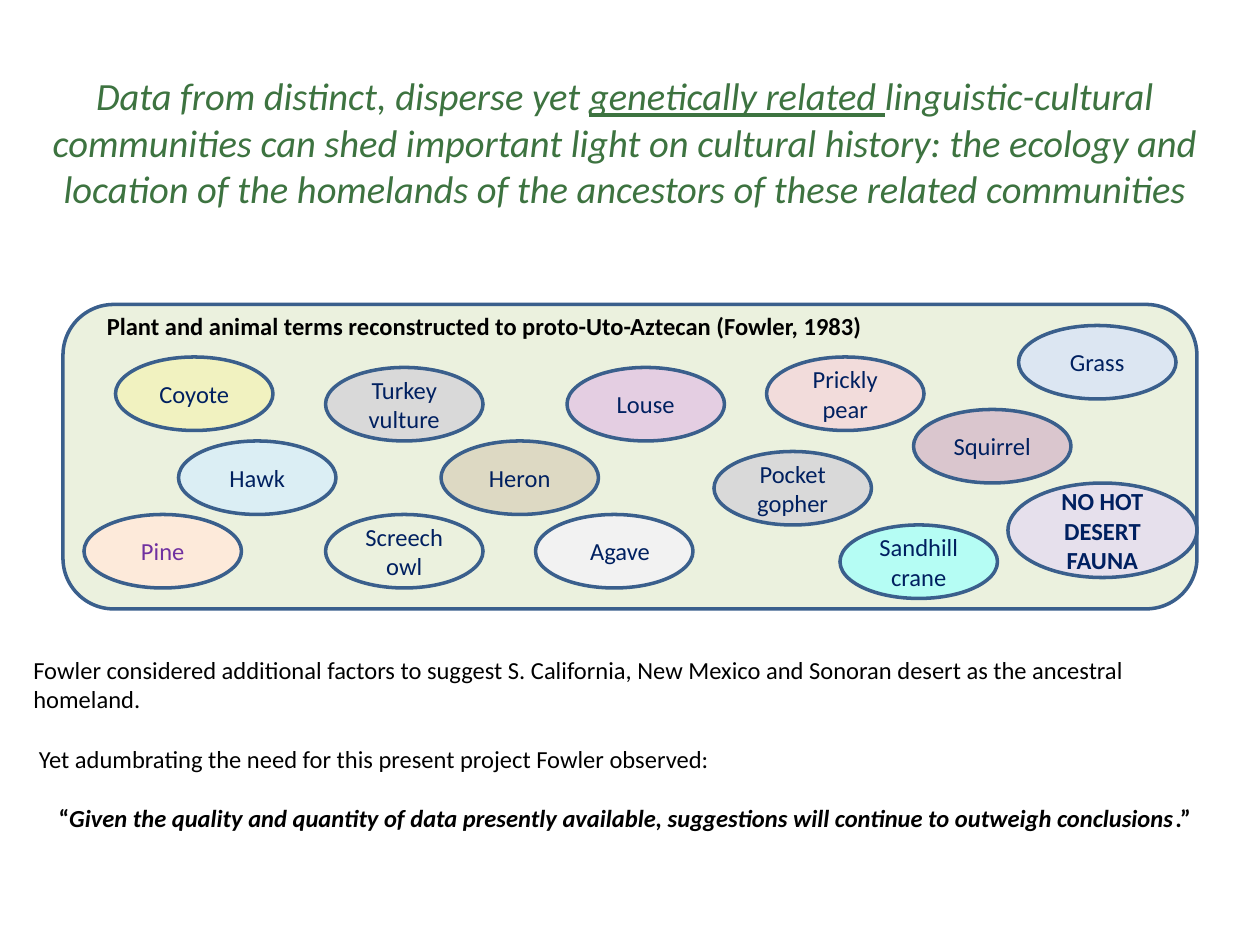
from typing import NamedTuple

from pptx import Presentation
from pptx import util as u
from pptx.dml.color import RGBColor
from pptx.enum import shapes, text

PX = 7620
NAVY = "002060"
BLACK = "000000"
GREEN = "3D7340"
OUTLINE = "3A5F8C"
PANEL = "EBF1DE"


class Term(NamedTuple):
    name: str
    left: int
    top: int
    fill: str
    color: str = NAVY
    width: int = 150
    height: int = 70
    bold: bool = False


class Span(NamedTuple):
    wording: str
    italic: bool = False
    underline: bool = False


TERMS = [
    Term("Grass", 970, 310, "DCE6F2"),
    Term("Hawk", 170, 420, "DBEEF4"),
    Term("Pine", 80, 490, "FDEADA", "7030A0"),
    Term("Screech owl", 310, 490, PANEL),
    Term("Turkey vulture", 310, 350, "D9D9D9"),
    Term("Prickly pear", 730, 340, "F2DCDB"),
    Term("", 510, 490, "F2F2F2"),
    Term("Coyote", 110, 340, "F1F2C0"),
    Term("NO HOT DESERT FAUNA", 960, 460, "E6E0EC", width=180, height=90, bold=True),
    Term("Heron", 420, 420, "DDD9C3"),
    Term("Pocket gopher", 680, 430, "D9D9D9"),
    Term("Squirrel", 870, 390, "DAC6CE"),
    Term("Louse", 540, 350, "E4CEE2"),
    Term("Sandhill crane", 800, 500, "B5FDF4"),
]

TITLE = [
    Span("Data from distinct, disperse yet ", italic=True),
    Span("genetically related ", italic=True, underline=True),
    Span("linguistic-cultural communities can shed important light on cultural history: "
         "the ecology and location of the homelands of the ancestors of these related "
         "communities", italic=True),
]

REMARKS = [
    "Fowler considered additional factors to suggest S. California, New Mexico and "
    "Sonoran desert as the ancestral homeland.",
    " Yet adumbrating the need for this present project Fowler observed:",
]

QUOTE = [
    Span("“"),
    Span("Given the quality and quantity of data presently available, suggestions will "
         "continue to outweigh conclusions", italic=True),
    Span(".”"),
]


def rgb(value: str) -> RGBColor:
    return RGBColor.from_string(value)


def px(*lengths: int) -> list[int]:
    return [length * PX for length in lengths]


def style(para, size: int = 14, color: str = BLACK, bold: bool = False,
          centered: bool = False) -> None:
    para.font.name = "Calibri"
    para.font.size = u.Pt(size)
    para.font.bold = bold
    para.font.color.rgb = rgb(color)
    para.alignment = text.PP_ALIGN.CENTER if centered else text.PP_ALIGN.LEFT


def add_spans(para, spans: list[Span]) -> None:
    for span in spans:
        run = para.add_run()
        run.text = span.wording
        run.font.italic = span.italic
        run.font.underline = span.underline


def add_outlined(page, kind, left: int, top: int, width: int, height: int, fill: str):
    shape = page.shapes.add_shape(kind, *px(left, top, width, height))
    shape.shadow.inherit = False
    shape.fill.solid()
    shape.fill.fore_color.rgb = rgb(fill)
    shape.line.color.rgb = rgb(OUTLINE)
    shape.line.width = u.Pt(2)
    return shape


def add_term(page, term: Term) -> None:
    oval = add_outlined(page, shapes.MSO_SHAPE.OVAL, term.left, term.top,
                        term.width, term.height, term.fill)
    if term.name:
        frame = oval.text_frame
        frame.vertical_anchor = text.MSO_ANCHOR.MIDDLE
        frame.text = term.name
        style(frame.paragraphs[0], color=term.color, bold=term.bold, centered=True)


def add_frame(page, left: int, top: int, width: int, height: int):
    frame = page.shapes.add_textbox(*px(left, top, width, height)).text_frame
    frame.word_wrap = True
    return frame


def add_title(page) -> None:
    frame = add_frame(page, 20, 60, 1150, 150)
    frame.vertical_anchor = text.MSO_ANCHOR.MIDDLE
    para = frame.paragraphs[0]
    add_spans(para, TITLE)
    style(para, size=22, color=GREEN, centered=True)


def add_label(page, wording: str, left: int, top: int, width: int, color: str,
              bold: bool = False, centered: bool = False) -> None:
    frame = add_frame(page, left, top, width, 41)
    frame.text = wording
    style(frame.paragraphs[0], color=color, bold=bold, centered=centered)


def add_remarks(page) -> None:
    frame = add_frame(page, 20, 618, 1150, 182)
    frame.text = "\n".join(REMARKS)
    for para in frame.paragraphs:
        style(para)
    quote = frame.add_paragraph()
    add_spans(quote, QUOTE)
    style(quote, bold=True, centered=True)
    for para in frame.paragraphs[1:]:
        para.space_before = u.Pt(17)


def main() -> None:
    deck = Presentation()
    deck.slide_width, deck.slide_height = px(1200, 900)
    page = deck.slides.add_slide(deck.slide_layouts[6])
    add_title(page)
    add_outlined(page, shapes.MSO_SHAPE.ROUNDED_RECTANGLE, 60, 290, 1080, 290, PANEL)
    for term in TERMS:
        add_term(page, term)
    add_label(page, "Agave", 540, 505, 101, NAVY, centered=True)
    add_label(page, "Plant and animal terms reconstructed to proto-Uto-Aztecan (Fowler, 1983)",
              90, 290, 770, BLACK, bold=True)
    add_remarks(page)
    deck.save("out.pptx")


if __name__ == "__main__":
    main()
